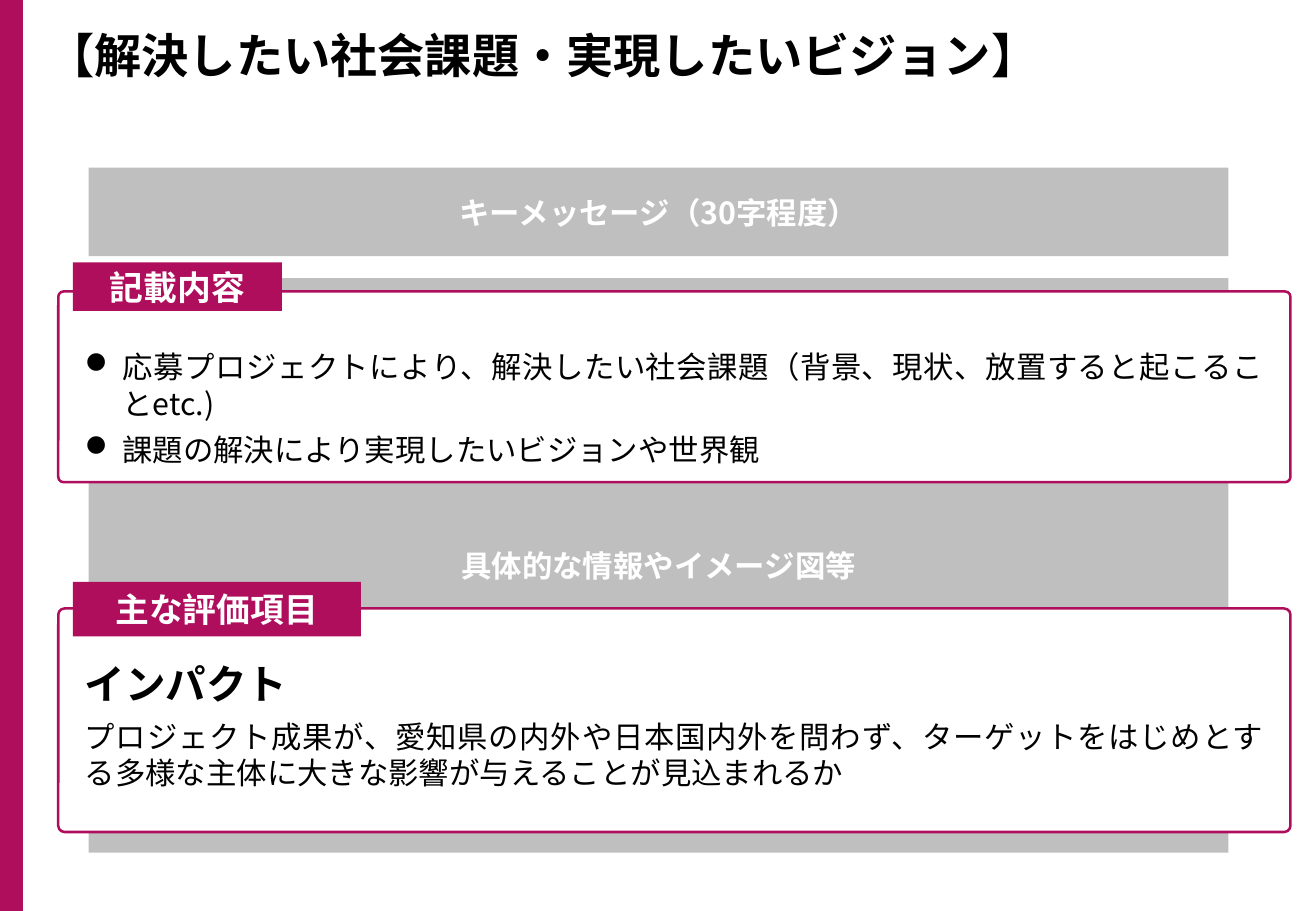
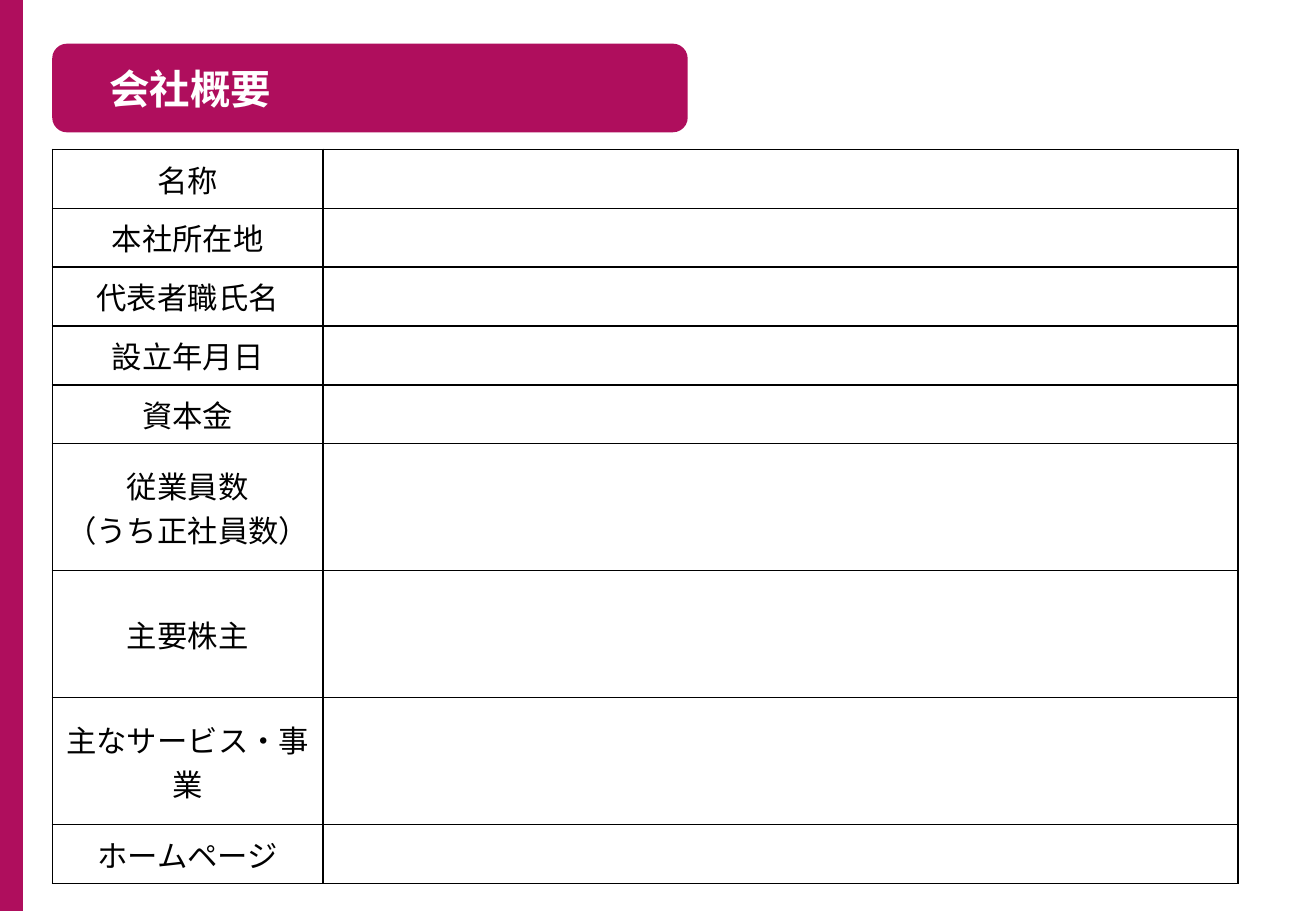
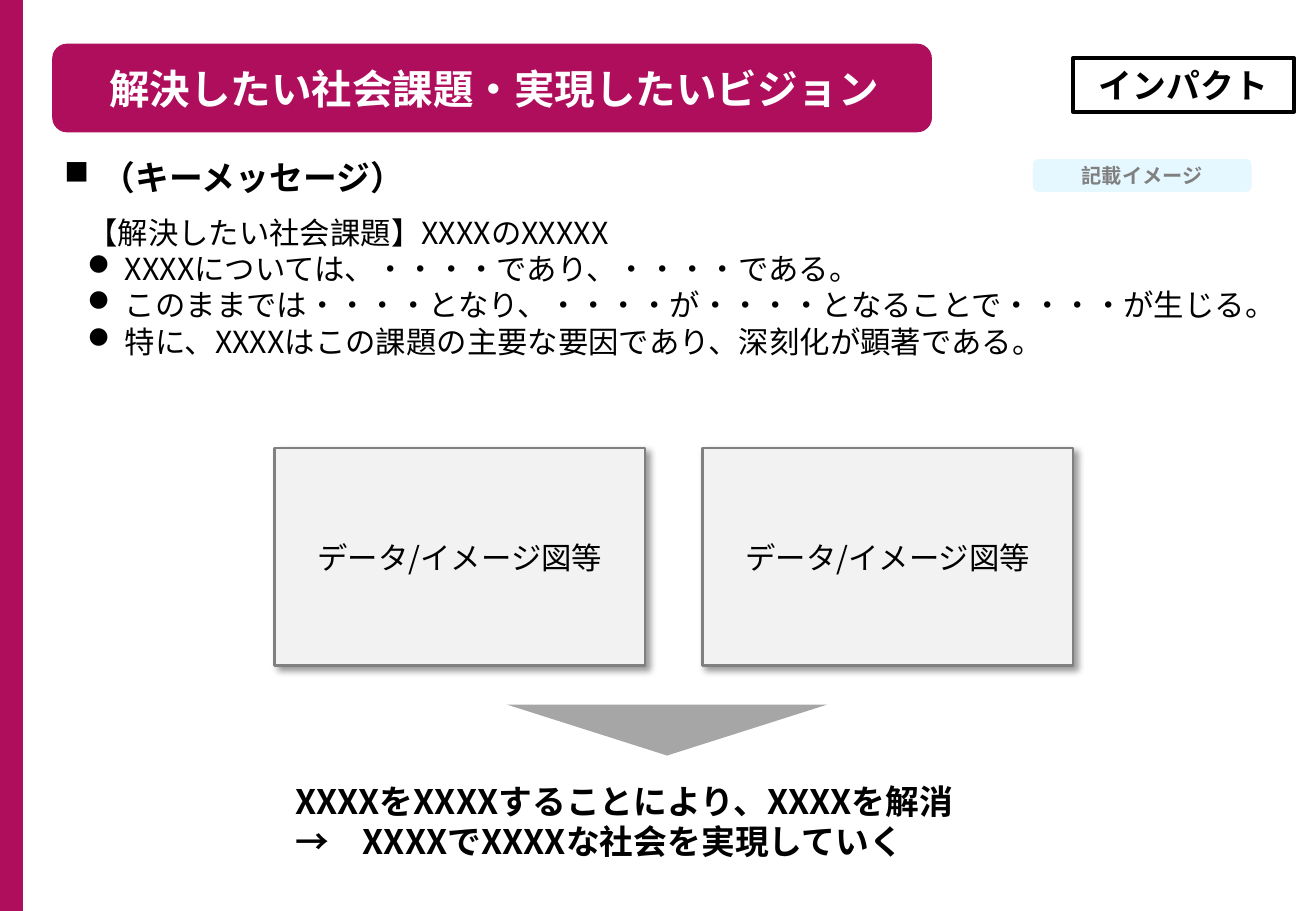
from dataclasses import dataclass

from lxml.etree import SubElement
from pptx import Presentation
from pptx.dml.color import RGBColor
from pptx.enum.shapes import MSO_SHAPE as Shape
from pptx.enum.text import MSO_ANCHOR as Anchor, MSO_AUTO_SIZE as AutoSize, PP_ALIGN as Align
from pptx.oxml.ns import qn
from pptx.util import Inches, Pt

# Shared style
FONT = "Noto Sans CJK JP"
WINE, WHITE, BLACK = "AF0E5D", "FFFFFF", "000000"
SILVER, GREY, PALE = "BFBFBF", "808080", "F2F2F2"
WIDTH, HEIGHT, BAND = 10.83, 7.5, 0.19
INDENT = 0.31
DISC, SQUARE = "l", "n"  # Wingdings codes


@dataclass
class Line:
    text: str
    size: int = 18
    bold: bool = False
    bullet: str = ""
    before: int = 0


def colour(value):
    return RGBColor.from_string(value)


def add_xml(parent, tag, **attributes):
    return SubElement(parent, qn(tag), **attributes)


def inches(*lengths):
    return [Inches(length) for length in lengths]


# Text
def format_runs(para, size, bold, ink, font):
    for span in para.runs:
        span.font.name = font
        span.font.size = Pt(size)
        span.font.bold = bold
        span.font.color.rgb = colour(ink)
        add_xml(span._r.get_or_add_rPr(), "a:ea", typeface=FONT)


def write(frame, lines, ink=BLACK, align=Align.LEFT, anchor=Anchor.MIDDLE, font=FONT):
    frame.word_wrap = True
    frame.auto_size = AutoSize.NONE
    frame.vertical_anchor = anchor
    for index, line in enumerate(lines):
        para = frame.add_paragraph() if index else frame.paragraphs[0]
        para.text = line.text
        para.alignment = align
        if line.bullet:
            properties = para._p.get_or_add_pPr()
            properties.set("marL", str(Inches(INDENT)))
            properties.set("indent", str(-Inches(INDENT)))
            add_xml(properties, "a:buFont", typeface="Wingdings", charset="2")
            add_xml(properties, "a:buChar", char=line.bullet)
        if line.before:
            para.space_before = Pt(line.before)
        format_runs(para, line.size, line.bold, ink, font)


def add_text(shapes, place, lines, **style):
    box = shapes.add_textbox(*inches(*place))
    write(box.text_frame, lines, **style)


# Shapes
def add_box(shapes, place, fill=None, line=None, width=1.5, kind=Shape.RECTANGLE,
            label=None, **style):
    box = shapes.add_shape(kind, *inches(*place))
    box.shadow.inherit = False
    if fill:
        box.fill.solid()
        box.fill.fore_color.rgb = colour(fill)
    else:
        box.fill.background()
    if line:
        box.line.color.rgb = colour(line)
        box.line.width = Pt(width)
    else:
        box.line.fill.background()
    if label:
        write(box.text_frame, [label], align=Align.CENTER, **style)
    return box


def add_shadow(box):
    effects = box._element.spPr.find(qn("a:effectLst"))
    shadow = add_xml(effects, "a:outerShdw", blurRad=str(Pt(4)), dist=str(Pt(3)),
                     dir=str(45 * 60000), algn="tl", rotWithShape="0")
    tint = add_xml(shadow, "a:srgbClr", val=BLACK)
    add_xml(tint, "a:alpha", val="40000")


def add_panel(slide, top, height, tab, tab_text, text_place, lines):
    """Outlined panel with a coloured tab on its upper edge."""
    shapes = slide.shapes.add_group_shape().shapes
    frame = add_box(shapes, (0.48, top, 10.14, height), WHITE, WINE,
                    kind=Shape.ROUNDED_RECTANGLE)
    frame.adjustments[0] = 0.028
    add_text(shapes, text_place, lines, align=Align.JUSTIFY, anchor=Anchor.TOP)
    add_box(shapes, tab, WINE, label=Line(tab_text, 20, True), ink=WHITE)


# Titles and master
def new_slide(deck, place):
    slide = deck.slides.add_slide(deck.slide_layouts[5])
    title = slide.shapes.title
    title.left, title.top, title.width, title.height = inches(*place)
    return slide, title


def new_banner_slide(deck, text, width):
    """Slide whose title lies on a rounded banner."""
    place = (0.43, 0.36, width, 0.73)
    slide, title = new_slide(deck, place)
    banner = add_box(slide.shapes, place, WINE, kind=Shape.ROUNDED_RECTANGLE)
    title._element.addprevious(banner._element)
    write(title.text_frame, [Line(text, 24, True)], ink=WHITE)
    title.text_frame.margin_left = Inches(0.47)
    return slide


def add_master_band(deck, slide):
    """Draw the band and the white sheet, and move them to the slide master."""
    for index, (left, fill) in enumerate(((0, WINE), (BAND, WHITE))):
        sheet = add_box(slide.shapes, (left, 0, WIDTH - left, HEIGHT), fill)
        sheet._element.nvSpPr.cNvPr.set("id", str(20 + index))
        deck.slide_master.shapes._spTree.insert(2 + index, sheet._element)


# Table
def format_cell(cell):
    properties = cell._tc.get_or_add_tcPr()
    for side in ("a:lnL", "a:lnR", "a:lnT", "a:lnB"):
        border = add_xml(properties, side, w=str(Pt(1)))
        fill = add_xml(border, "a:solidFill")
        add_xml(fill, "a:srgbClr", val=BLACK)
    cell.fill.solid()
    cell.fill.fore_color.rgb = colour(WHITE)
    cell.vertical_anchor = Anchor.MIDDLE
    cell.margin_left = cell.margin_right = Inches(0.07)
    cell.margin_top = cell.margin_bottom = 0


def add_form(slide, rows, widths):
    height = sum(row_height for _, row_height in rows)
    table = slide.shapes.add_table(
        len(rows), len(widths), *inches(0.43, 1.23, sum(widths), height)).table
    for column, width in zip(table.columns, widths):
        column.width = Inches(width)
    for row, (label, row_height) in zip(table.rows, rows):
        row.height = Inches(row_height)
        for cell in row.cells:
            format_cell(cell)
        heading = row.cells[0]
        heading.text_frame.text = label
        for para in heading.text_frame.paragraphs:
            para.alignment = Align.CENTER
            format_runs(para, 18, False, BLACK, FONT)


# Slides
def build_guide(deck):
    slide, title = new_slide(deck, (0.29, 0.17, 10.54, 0.57))
    add_master_band(deck, slide)
    write(title.text_frame, [Line("【解決したい社会課題・実現したいビジョン】", 28, True)],
          anchor=Anchor.TOP)
    for top, height, text in ((1.38, 0.73, "キーメッセージ（30字程度）"),
                              (2.29, 4.73, "具体的な情報やイメージ図等")):
        add_box(slide.shapes, (0.73, top, 9.38, height), SILVER,
                label=Line(text, bold=True), ink=WHITE)
    add_panel(slide, 5.01, 1.84, (0.6, 4.79, 2.37, 0.45), "主な評価項目",
              (0.6, 5.38, 9.9, 1.19), [
                  Line("インパクト", 24, True),
                  Line("プロジェクト成果が、愛知県の内外や日本国内外を問わず、ターゲットをはじめとする"
                       "多様な主体に大きな影響が与えることが見込まれるか", before=6)])
    add_panel(slide, 2.4, 1.57, (0.6, 2.16, 1.72, 0.4), "記載内容",
              (0.6, 2.82, 9.9, 1.1), [
                  Line("応募プロジェクトにより、解決したい社会課題（背景、現状、放置すると起こること"
                       "etc.)", bullet=DISC),
                  Line("課題の解決により実現したいビジョンや世界観", bullet=DISC, before=6)])


def build_company(deck):
    slide = new_banner_slide(deck, "会社概要", 5.23)
    short, tall = 0.485, 1.045
    add_form(slide, [
        ("名称", short), ("本社所在地", short), ("代表者職氏名", short),
        ("設立年月日", short), ("資本金", short),
        ("従業員数\n（うち正社員数）", tall), ("主要株主", tall),
        ("主なサービス・事業", tall), ("ホームページ", short)], (2.23, 7.53))


def build_example(deck):
    slide = new_banner_slide(deck, "解決したい社会課題・実現したいビジョン", 7.24)
    shapes = slide.shapes
    add_text(shapes, (0.43, 1.25, 9.75, 0.41),
             [Line("（キーメッセージ）", 20, True, SQUARE)])
    add_text(shapes, (0.62, 1.71, 9.95, 1.31), [
        Line("【解決したい社会課題】XXXXのXXXXX"),
        Line("XXXXについては、・・・・であり、・・・・である。", bullet=DISC),
        Line("このままでは・・・・となり、・・・・が・・・・となることで・・・・が生じる。", bullet=DISC),
        Line("特に、XXXXはこの課題の主要な要因であり、深刻化が顕著である。", bullet=DISC)],
        anchor=Anchor.TOP)
    for left in (2.26, 5.78):
        figure = add_box(shapes, (left, 3.69, 3.05, 1.79), PALE, GREY,
                         label=Line("データ/イメージ図等"))
        add_shadow(figure)
    arrow = add_box(shapes, (4.17, 5.8, 2.64, 0.42), "A6A6A6",
                    kind=Shape.ISOSCELES_TRIANGLE)
    arrow.rotation = 180
    add_text(shapes, (2.33, 6.27, 6.17, 0.98), [
        Line("XXXXをXXXXすることにより、XXXXを解消", 20, True),
        Line("→　XXXXでXXXXな社会を実現していく", 20, True)])
    add_box(shapes, (8.83, 0.48, 1.82, 0.44), line=BLACK, width=2.25,
            label=Line("インパクト", 20, True))
    add_box(shapes, (8.5, 1.31, 1.8, 0.27), "E6F8FF", kind=Shape.ROUNDED_RECTANGLE,
            label=Line("記載イメージ", 12, True), ink=GREY, font="Lato")


def main():
    deck = Presentation()
    deck.slide_width, deck.slide_height = inches(WIDTH, HEIGHT)
    build_guide(deck)
    build_company(deck)
    build_example(deck)
    deck.save("out.pptx")


if __name__ == "__main__":
    main()
